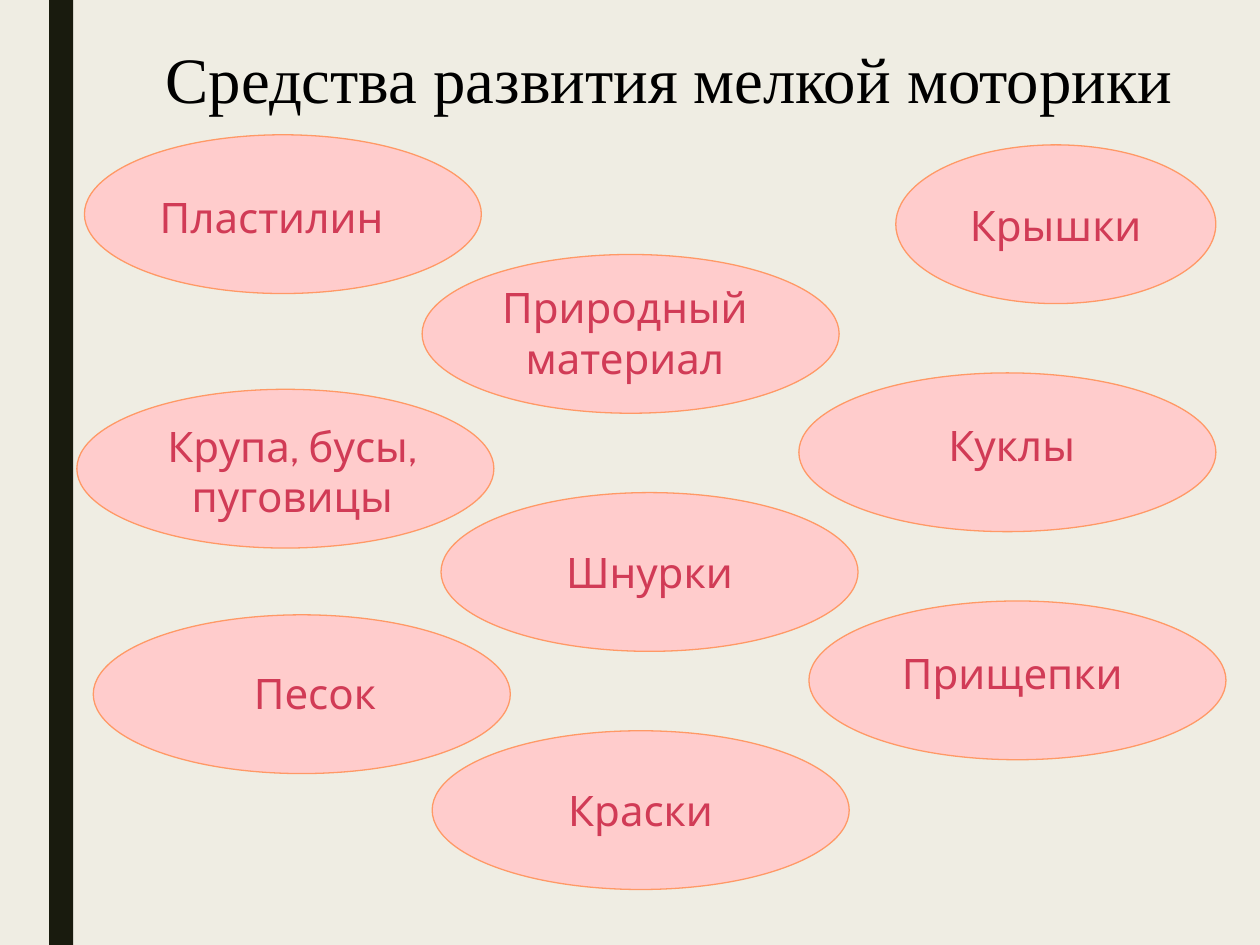
"""Build a slide of ovals naming means of developing fine motor skills."""
from pptx import Presentation
from pptx.dml.color import RGBColor
from pptx.enum import shapes, text
from pptx.util import Inches, Pt

TITLE = "Средства развития мелкой моторики"
OVAL_W, OVAL_H = 3.31, 1.26
OVALS = [
    (0.61, 3.09, OVAL_W, ""),
    (0.67, 1.07, 3.15, ""),
    (0.74, 4.88, OVAL_W, ""),
    (3.35, 2.02, OVAL_W, ""),
    (6.34, 2.96, OVAL_W, ""),
    (6.42, 4.77, OVAL_W, ""),
    (7.11, 1.15, 2.54, "Крышки"),
    (3.5, 3.91, OVAL_W, "Шнурки"),
    (3.43, 5.8, OVAL_W, "Краски"),
]
LABELS = [
    (1.13, 1.47, 2.05, 0.5, "Пластилин"),
    (1.22, 3.28, 2.2, 0.91, "Крупа, бусы, пуговицы"),
    (3.82, 2.18, 2.28, 0.91, "Природный материал"),
    (6.97, 3.28, 2.12, 0.5, "Куклы"),
    (1.4, 5.25, 2.2, 0.5, "Песок"),
    (7.05, 5.09, 1.97, 0.5, "Прищепки"),
]

CREAM = RGBColor(0xEF, 0xED, 0xE3)
DARK = RGBColor(0x19, 0x1B, 0x0E)
PINK = RGBColor(0xFF, 0xCC, 0xCC)
ORANGE = RGBColor(0xFF, 0x99, 0x66)
CRIMSON = RGBColor(0xD1, 0x3B, 0x56)
BLACK = RGBColor(0, 0, 0)


def write(sp, words, size=24, font="Cabin", color=CRIMSON, wrap=True):
    tf = sp.text_frame
    tf.word_wrap = wrap
    tf.vertical_anchor = text.MSO_ANCHOR.MIDDLE
    p = tf.paragraphs[0]
    p.alignment = text.PP_ALIGN.CENTER
    r = p.add_run()
    r.text = words
    r.font.size = Pt(size)
    r.font.name = font
    r.font.color.rgb = color


def add_shape(s, kind, box, fill, line=None):
    sp = s.shapes.add_shape(kind, *map(Inches, box))
    sp.shadow.inherit = False
    sp.fill.solid()
    sp.fill.fore_color.rgb = fill
    if line is None:
        sp.line.fill.background()
    else:
        sp.line.color.rgb = line
        sp.line.width = Pt(0.75)
    return sp


def add_text(s, box, words, **style):
    write(s.shapes.add_textbox(*map(Inches, box)), words, **style)


def main():
    prs = Presentation()
    prs.slide_width, prs.slide_height = Inches(10), Inches(7.5)
    s = prs.slides.add_slide(prs.slide_layouts[6])
    s.background.fill.solid()
    s.background.fill.fore_color.rgb = CREAM

    add_shape(s, shapes.MSO_SHAPE.RECTANGLE, (0.39, 0, 0.19, 7.5), DARK)
    add_text(s, (1.06, 0.26, 8.5, 0.71), TITLE,
             size=37, font="Times New Roman", color=BLACK)
    for x, y, w, words in OVALS:
        sp = add_shape(s, shapes.MSO_SHAPE.OVAL, (x, y, w, OVAL_H), PINK, ORANGE)
        if words:
            write(sp, words, wrap=False)
    for *box, words in LABELS:
        add_text(s, box, words)

    prs.save("out.pptx")


if __name__ == "__main__":
    main()
